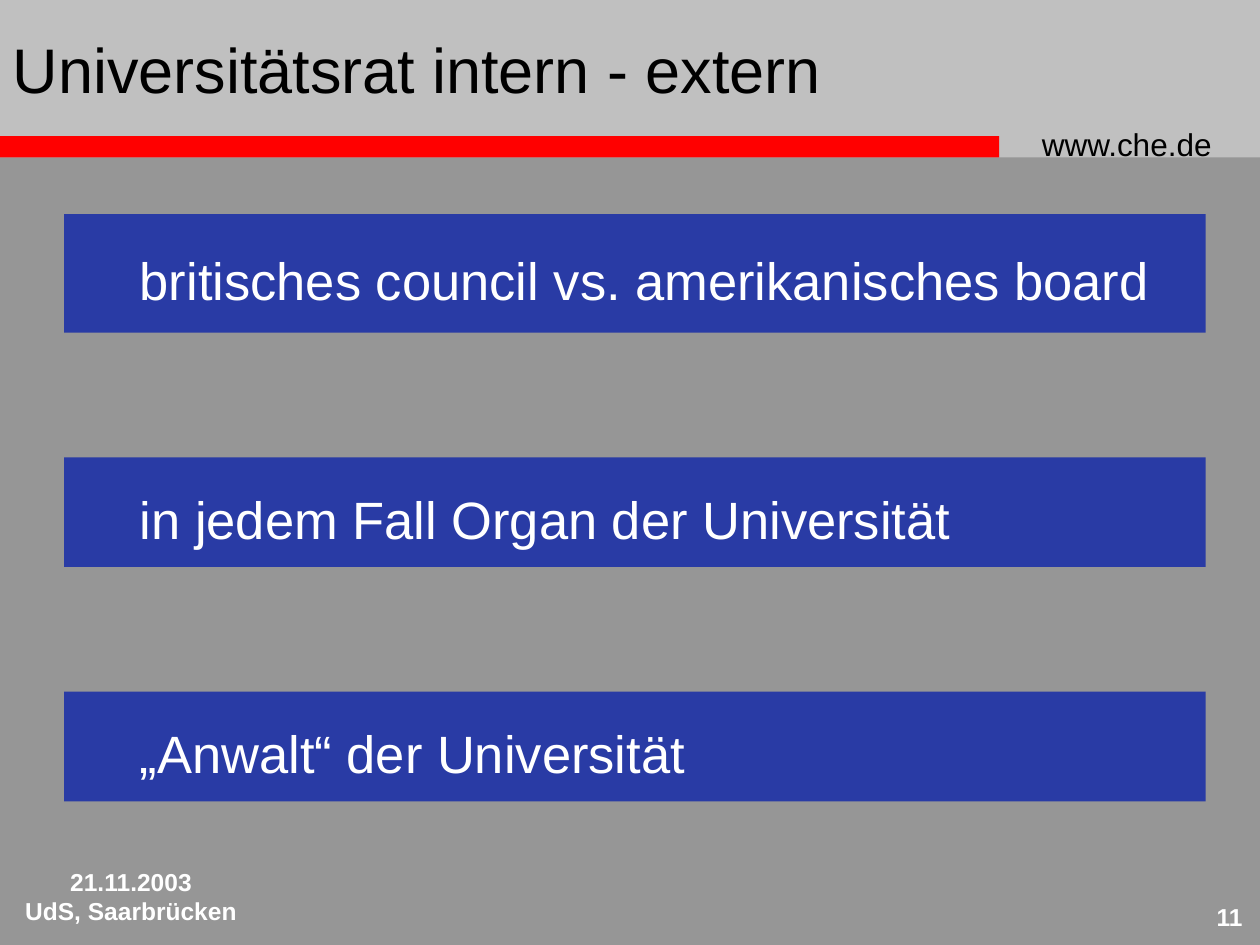
from pptx import Presentation
from pptx.dml.color import RGBColor
from pptx.enum.shapes import MSO_SHAPE
from pptx.enum.text import MSO_ANCHOR, PP_ALIGN
from pptx.util import Inches, Pt

BLACK = RGBColor(0x00, 0x00, 0x00)
WHITE = RGBColor(0xFF, 0xFF, 0xFF)
GREY = RGBColor(0x96, 0x96, 0x96)
SILVER = RGBColor(0xC0, 0xC0, 0xC0)
RED = RGBColor(0xFF, 0x00, 0x00)
BLUE = RGBColor(0x29, 0x3B, 0xA5)

THESES = [
    ("britisches council vs. amerikanisches board", 0.94),
    ("in jedem Fall Organ der Universität", 0.87),
    ("„Anwalt“ der Universität", 0.87),
]


def write(shape, text, size, color, bold=False, align=PP_ALIGN.LEFT, anchor=MSO_ANCHOR.TOP):
    """Set the text of a shape and format all its paragraphs."""
    frame = shape.text_frame
    frame.text = text
    frame.word_wrap = True
    frame.vertical_anchor = anchor
    for para in frame.paragraphs:
        para.alignment = align
        for run in para.runs:
            font = run.font
            font.name, font.size, font.bold = "Arial", Pt(size), bold
            font.color.rgb = color


def add_bar(slide, left, top, width, height, color):
    """Add a plain filled rectangle, sized in inches."""
    bar = slide.shapes.add_shape(
        MSO_SHAPE.RECTANGLE, Inches(left), Inches(top), Inches(width), Inches(height))
    bar.shadow.inherit = False
    bar.fill.solid()
    bar.fill.fore_color.rgb = color
    bar.line.fill.background()
    return bar


def add_label(slide, left, top, width, height, text, size, color, **style):
    """Add a text box, sized in inches."""
    box = slide.shapes.add_textbox(Inches(left), Inches(top), Inches(width), Inches(height))
    write(box, text, size, color, **style)


def add_header(slide, left, top, width, height):
    """Place the band, the red stripe, the web address and the title."""
    stripe = 0.17
    add_bar(slide, left, top, width, height, SILVER)
    add_bar(slide, left, top + height - stripe, 7.93, stripe, RED)
    add_label(slide, left + 8.17, top + 0.94, 1.75, 0.4, "www.che.de", 18, BLACK)
    title = slide.shapes.title
    title.left, title.top = Inches(left), Inches(top)
    title.width, title.height = Inches(8.08), Inches(height - stripe)
    write(title, "Universitätsrat intern - extern", 36, BLACK, anchor=MSO_ANCHOR.MIDDLE)
    slide.shapes.element.append(title.element)


def add_theses(slide, left, top, width, gap):
    """Stack the theses as blue bars with equal gaps."""
    for text, height in THESES:
        bar = add_bar(slide, left, top, width, height, BLUE)
        write(bar, text, 30, WHITE, anchor=MSO_ANCHOR.MIDDLE)
        bar.text_frame.margin_left = Inches(0.6)
        bar.text_frame.paragraphs[0].line_spacing = 1.2
        top += height + gap


def add_footer(slide, left, top, width):
    """Place date and venue on the left and the page number on the right."""
    add_label(slide, left, top, 2.08, 0.5, "21.11.2003\nUdS, Saarbrücken", 14, WHITE,
              bold=True, align=PP_ALIGN.CENTER)
    add_label(slide, left + width - 0.58, top + 0.28, 0.58, 0.42, "11", 14, WHITE,
              bold=True, align=PP_ALIGN.RIGHT)


def main():
    """Build and save the slide."""
    deck = Presentation()
    deck.slide_width, deck.slide_height = Inches(10), Inches(7.5)
    slide = deck.slides.add_slide(deck.slide_layouts[5])
    slide.background.fill.solid()
    slide.background.fill.fore_color.rgb = GREY
    add_header(slide, 0, 0, 10, 1.25)
    add_theses(slide, 0.51, 1.7, 9.06, 0.99)
    add_footer(slide, 0, 6.83, 9.96)
    deck.save("out.pptx")


if __name__ == "__main__":
    main()
